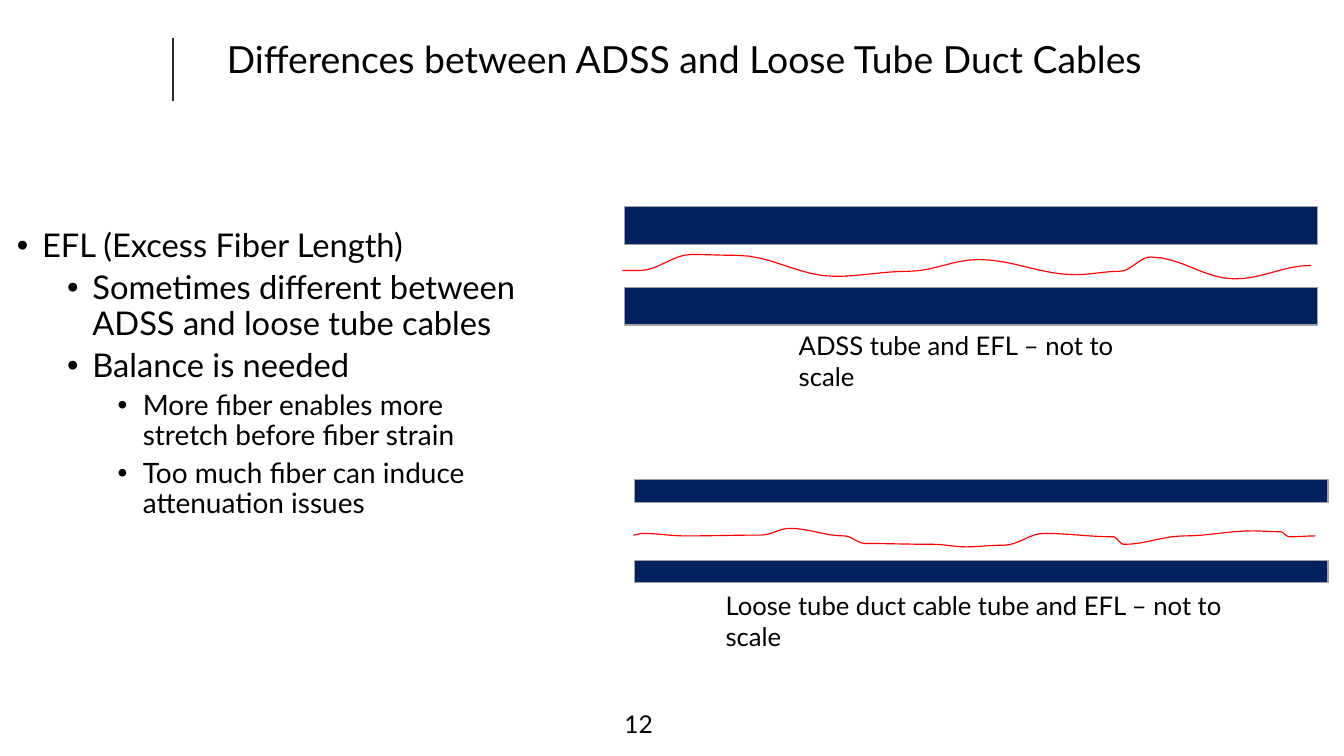
import itertools
import math

import lxml.etree
import pptx
import pptx.dml.color
import pptx.enum.shapes
import pptx.enum.text
import pptx.oxml.ns
import pptx.util

COLORS = {"text": "000000", "tube": "002060", "edge": "A3A3A3",
          "fiber": "FF0000", "rule": "2B2B2B"}
FONT = "Lato"
COLUMNS, ROWS = 16, 9
TUBE_LENGTH, WALL_PITCH = 8.26, 0.96
INDENT, LEVEL_STEP = 0.3, 0.6
STEPS_PER_BEND = 8
ANCHOR = pptx.enum.text.MSO_ANCHOR
ALIGN = pptx.enum.text.PP_ALIGN

ADSS_BENDS = [(7.41, 3.22), (7.62, 3.22), (8.23, 3.03), (8.77, 3.04), (9.94, 3.29),
              (10.81, 3.23), (11.65, 3.09), (12.8, 3.27), (13.33, 3.23), (13.7, 3.06),
              (14.7, 3.32), (15.61, 3.16)]
DUCT_BENDS = [(7.54, 6.37), (7.65, 6.35), (8.16, 6.38), (9.06, 6.37), (9.4, 6.29),
              (10.05, 6.38), (10.3, 6.47), (11.11, 6.48), (11.5, 6.51), (11.95, 6.49),
              (12.43, 6.35), (13.25, 6.39), (13.38, 6.48), (14.1, 6.38), (14.9, 6.32),
              (15.24, 6.33), (15.35, 6.39), (15.66, 6.38)]
EFL_POINTS = [
    (0, "EFL (Excess Fiber Length)"),
    (1, "Sometimes different between ADSS and loose tube cables"),
    (1, "Balance is needed"),
    (2, "More fiber enables more stretch before fiber strain"),
    (2, "Too much fiber can induce attenuation issues")]
LEVEL_SIZES = [28, 28, 24]


def rgb(name):
    return pptx.dml.color.RGBColor.from_string(COLORS[name])


def wave(bends):
    yield bends[0]
    for (x0, y0), (x1, y1) in itertools.pairwise(bends):
        for step in range(1, STEPS_PER_BEND + 1):
            t = step / STEPS_PER_BEND
            ease = (1 - math.cos(math.pi * t)) / 2
            yield x0 + (x1 - x0) * t, y0 + (y1 - y0) * ease


def write(p, text, size=22, spacing=1.0, before=0, align=ALIGN.LEFT, bullet=None, level=0):
    p.alignment = align
    p.line_spacing = spacing
    p.space_before = pptx.util.Pt(before)
    p.level = level
    if bullet:
        pPr = p._p.get_or_add_pPr()
        pPr.set("marL", str(pptx.util.Inches(INDENT + LEVEL_STEP * level)))
        pPr.set("indent", str(pptx.util.Inches(-INDENT)))
        bu = lxml.etree.SubElement(pPr, pptx.oxml.ns.qn("a:buChar"))
        bu.set("char", bullet)
    r = p.add_run()
    r.text = text
    r.font.name = FONT
    r.font.size = pptx.util.Pt(size)
    r.font.color.rgb = rgb("text")


class Deck:
    def __init__(self):
        self.prs = pptx.Presentation()
        self.prs.slide_width = pptx.util.Inches(16)
        self.prs.slide_height = pptx.util.Inches(9)
        self.s = self.prs.slides.add_slide(self.prs.slide_layouts[1])

    def grid(self, col, row):
        return (round(col * self.prs.slide_width / COLUMNS),
                round(row * self.prs.slide_height / ROWS))

    def box(self, col, row, cols, rows):
        return self.grid(col, row) + self.grid(cols, rows)

    def frame(self, sp, anchor=ANCHOR.TOP):
        tf = sp.text_frame
        tf.word_wrap = True
        tf.auto_size = pptx.enum.text.MSO_AUTO_SIZE.NONE
        tf.vertical_anchor = anchor
        return tf

    def place(self, sp, *area):
        sp.left, sp.top, sp.width, sp.height = self.box(*area)
        return self.frame(sp)

    def title(self, text, *area):
        tf = self.place(self.s.shapes.title, *area)
        tf.margin_right = 0
        write(tf.paragraphs[0], text, size=32, spacing=0.9)

    def bullets(self, items, *area):
        tf = self.place(self.s.placeholders[1], *area)
        for i, (level, text) in enumerate(items):
            p = tf.add_paragraph() if i else tf.paragraphs[0]
            write(p, text, size=LEVEL_SIZES[level], spacing=0.9, before=6 if i else 0,
                  bullet="•", level=level)

    def label(self, text, *area, anchor=ANCHOR.TOP, **fmt):
        tf = self.frame(self.s.shapes.add_textbox(*self.box(*area)), anchor)
        write(tf.paragraphs[0], text, **fmt)

    def outline(self, sp, color):
        sp.line.color.rgb = rgb(color)
        sp.line.width = pptx.util.Pt(1)

    def rule(self, col, top, bottom):
        kind = pptx.enum.shapes.MSO_CONNECTOR.STRAIGHT
        sp = self.s.shapes.add_connector(kind, *self.grid(col, top), *self.grid(col, bottom))
        self.outline(sp, "rule")
        lxml.etree.SubElement(sp._element.spPr, pptx.oxml.ns.qn("a:effectLst"))

    def wall(self, *area):
        kind = pptx.enum.shapes.MSO_SHAPE.RECTANGLE
        sp = self.s.shapes.add_shape(kind, *self.box(*area))
        sp.shadow.inherit = False
        sp.fill.solid()
        sp.fill.fore_color.rgb = rgb("tube")
        self.outline(sp, "edge")

    def fiber(self, bends):
        start, *rest = [self.grid(*point) for point in wave(bends)]
        fb = self.s.shapes.build_freeform(*start)
        fb.add_line_segments(rest, close=False)
        sp = fb.convert_to_shape()
        sp.shadow.inherit = False
        sp.fill.background()
        self.outline(sp, "fiber")

    def tube(self, col, row, thickness, bends):
        for top in (row, row + WALL_PITCH):
            self.wall(col, top, TUBE_LENGTH, thickness)
        self.fiber(bends)


def main():
    deck = Deck()
    deck.rule(2.06, 0.45, 1.2)
    deck.label("12", 7.11, 8.35, 0.76, 0.5, anchor=ANCHOR.BOTTOM,
               size=21, spacing=0.9, align=ALIGN.RIGHT)
    deck.title("Differences between ADSS and Loose Tube Duct Cables", 2.6, 0.44, 11.1, 0.81)
    deck.bullets(EFL_POINTS, 0.1, 2.68, 6.28, 4.14)
    deck.tube(7.55, 5.71, 0.27, DUCT_BENDS)
    deck.tube(7.43, 2.46, 0.45, ADSS_BENDS)
    deck.label("ADSS tube and EFL – not to scale", 9.41, 3.88, 4.55, 0.47)
    deck.label("Loose tube duct cable tube and EFL – not to scale", 8.54, 6.97, 6.7, 0.47)
    deck.prs.save("out.pptx")


if __name__ == "__main__":
    main()
